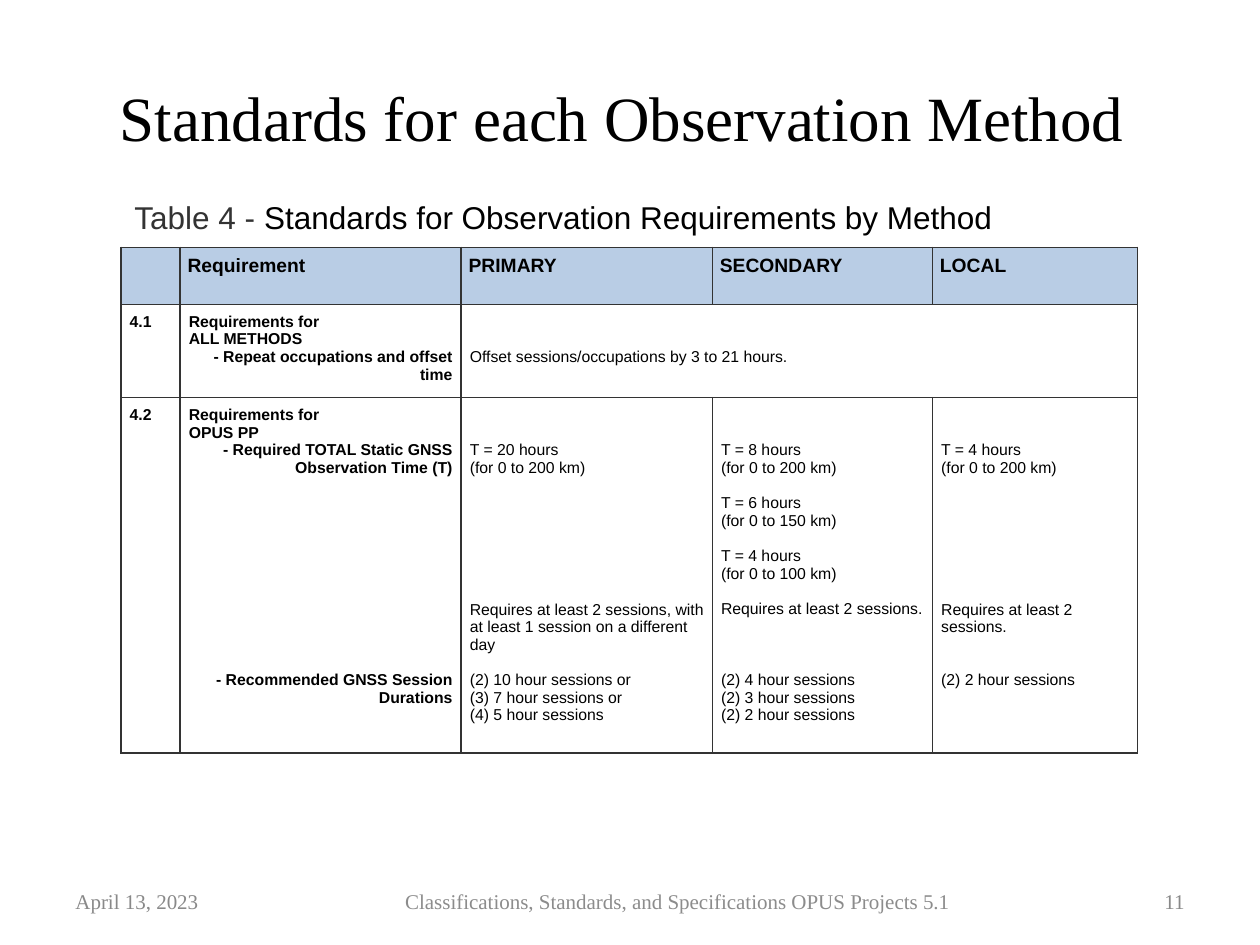
import pptx
import pptx.dml.color
import pptx.enum.text
import pptx.oxml
import pptx.oxml.ns
import pptx.util

Pt = pptx.util.Pt
RGBColor = pptx.dml.color.RGBColor
ALIGN = pptx.enum.text.PP_ALIGN
ANCHOR = pptx.enum.text.MSO_ANCHOR

BLACK = RGBColor(0x00, 0x00, 0x00)
WHITE = RGBColor(0xFF, 0xFF, 0xFF)
CHARCOAL = RGBColor(0x33, 0x33, 0x33)
FOOTER_GRAY = RGBColor(0x89, 0x89, 0x89)
FOOTER_TITLE_GRAY = RGBColor(0x8C, 0x8C, 0x8C)
HEADER_BLUE = RGBColor(0xB9, 0xCD, 0xE5)
SERIF, SANS = "Times New Roman", "Arial"

LINE = 10.1  # height of one line of 9 pt body text
COLUMN_WIDTHS = [33.8, 160.6, 143.6, 125.8, 117.1]
ROW_HEIGHTS = [32.5, 53, 203]
HEADINGS = ["", "Requirement", "PRIMARY", "SECONDARY", "LOCAL"]

# Each body cell lists (empty lines before, text); a leading "-" marks a sub-requirement.
BODY = [
    [
        [(0, "4.1")],
        [(0, "Requirements for"), (0, "ALL METHODS"),
         (0, "- Repeat occupations and offset time")],
        [(2, "Offset sessions/occupations by 3 to 21 hours.")],
    ],
    [
        [(0, "4.2")],
        [(0, "Requirements for"), (0, "OPUS PP"),
         (0, "- Required TOTAL Static GNSS Observation Time (T)"),
         (11, "- Recommended GNSS Session Durations")],
        [(2, "T = 20 hours"), (0, "(for 0 to 200 km)"),
         (7, "Requires at least 2 sessions, with at least 1 session on a different day"),
         (1, "(2) 10 hour sessions or"), (0, "(3) 7 hour sessions or"),
         (0, "(4) 5 hour sessions")],
        [(2, "T = 8 hours"), (0, "(for 0 to 200 km)"),
         (1, "T = 6 hours"), (0, "(for 0 to 150 km)"),
         (1, "T = 4 hours"), (0, "(for 0 to 100 km)"),
         (1, "Requires at least 2 sessions."),
         (3, "(2) 4 hour sessions"), (0, "(2) 3 hour sessions"),
         (0, "(2) 2 hour sessions")],
        [(2, "T = 4 hours"), (0, "(for 0 to 200 km)"),
         (7, "Requires at least 2 sessions."), (2, "(2) 2 hour sessions")],
    ],
]


def add_run(paragraph, text, size, face, color, bold=False):
    run = paragraph.add_run()
    run.text = text
    run.font.size = Pt(size)
    run.font.name = face
    run.font.bold = bold
    run.font.color.rgb = color


def add_text(slide, box, runs, size, face, align=ALIGN.LEFT, anchor=ANCHOR.MIDDLE):
    frame = slide.shapes.add_textbox(*map(Pt, box)).text_frame
    frame.word_wrap = True
    frame.vertical_anchor = anchor
    paragraph = frame.paragraphs[0]
    paragraph.alignment = align
    for text, color in runs:
        add_run(paragraph, text, size, face, color)


def add_footer(slide, left, top, width, height):
    add_text(slide, (left, top, 101, height), [("April 13, 2023", FOOTER_GRAY)], 12, SERIF)
    add_text(slide, (left + 130.3, top, 442, height),
             [("Classifications, Standards, and Specifications OPUS Projects 5.1",
               FOOTER_TITLE_GRAY)], 12, SERIF, ALIGN.CENTER)
    add_text(slide, (left + width - 57, top, 57, height), [("11", FOOTER_GRAY)],
             12, SERIF, ALIGN.RIGHT)


def style_cell(cell, fill, inset):
    cell.fill.solid()
    cell.fill.fore_color.rgb = fill
    cell.margin_left = cell.margin_right = Pt(inset)
    cell.margin_top = cell.margin_bottom = Pt(inset)
    properties = cell._tc.get_or_add_tcPr()
    for index, side in enumerate(("lnL", "lnR", "lnT", "lnB")):
        border = pptx.oxml.parse_xml(
            f'<a:{side} {pptx.oxml.ns.nsdecls("a")} w="{Pt(1)}"><a:solidFill>'
            f'<a:srgbClr val="{CHARCOAL}"/></a:solidFill></a:{side}>')
        properties.insert(index, border)


def fill_body_cell(cell, entries, bold):
    """Turn empty lines into a top margin or paragraph spacing."""
    for index, (gap, text) in enumerate(entries):
        if index == 0:
            paragraph = cell.text_frame.paragraphs[0]
            cell.margin_top = Pt(5 + gap * LINE)
        else:
            paragraph = cell.text_frame.add_paragraph()
            paragraph.space_before = Pt(gap * LINE)
        paragraph.alignment = ALIGN.RIGHT if text.startswith("-") else ALIGN.LEFT
        add_run(paragraph, text, 9, SANS, BLACK, bold)


def add_requirements_table(slide, left, top):
    table = slide.shapes.add_table(
        len(ROW_HEIGHTS), len(COLUMN_WIDTHS), Pt(left), Pt(top),
        Pt(sum(COLUMN_WIDTHS)), Pt(sum(ROW_HEIGHTS))).table
    for column, width in zip(table.columns, COLUMN_WIDTHS):
        column.width = Pt(width)
    for row_index, (row, height) in enumerate(zip(table.rows, ROW_HEIGHTS)):
        row.height = Pt(height)
        for cell in row.cells:
            if row_index == 0:
                style_cell(cell, HEADER_BLUE, 4.3)
            else:
                style_cell(cell, WHITE, 5)
    table.cell(1, 2).merge(table.cell(1, 4))

    for column, heading in enumerate(HEADINGS):
        if heading:
            add_run(table.cell(0, column).text_frame.paragraphs[0],
                    heading, 11, SANS, BLACK, True)
    for row_index, row in enumerate(BODY, start=1):
        for column, entries in enumerate(row):
            fill_body_cell(table.cell(row_index, column), entries, column < 2)


def main():
    deck = pptx.Presentation()
    deck.slide_width, deck.slide_height = Pt(720), Pt(540)
    slide = deck.slides.add_slide(deck.slide_layouts[6])
    add_text(slide, (31.5, 21.6, 648, 90),
             [("Standards for each Observation Method", BLACK)], 36, SERIF, ALIGN.CENTER)
    add_footer(slide, 36, 500.4, 648, 28.8)
    add_requirements_table(slide, 69.1, 141.4)
    add_text(slide, (69.8, 109.4, 615, 28.8),
             [("Table 4 - ", CHARCOAL),
              ("Standards for Observation Requirements by Method", BLACK)],
             18, SANS, anchor=ANCHOR.TOP)
    deck.save("out.pptx")


if __name__ == "__main__":
    main()
